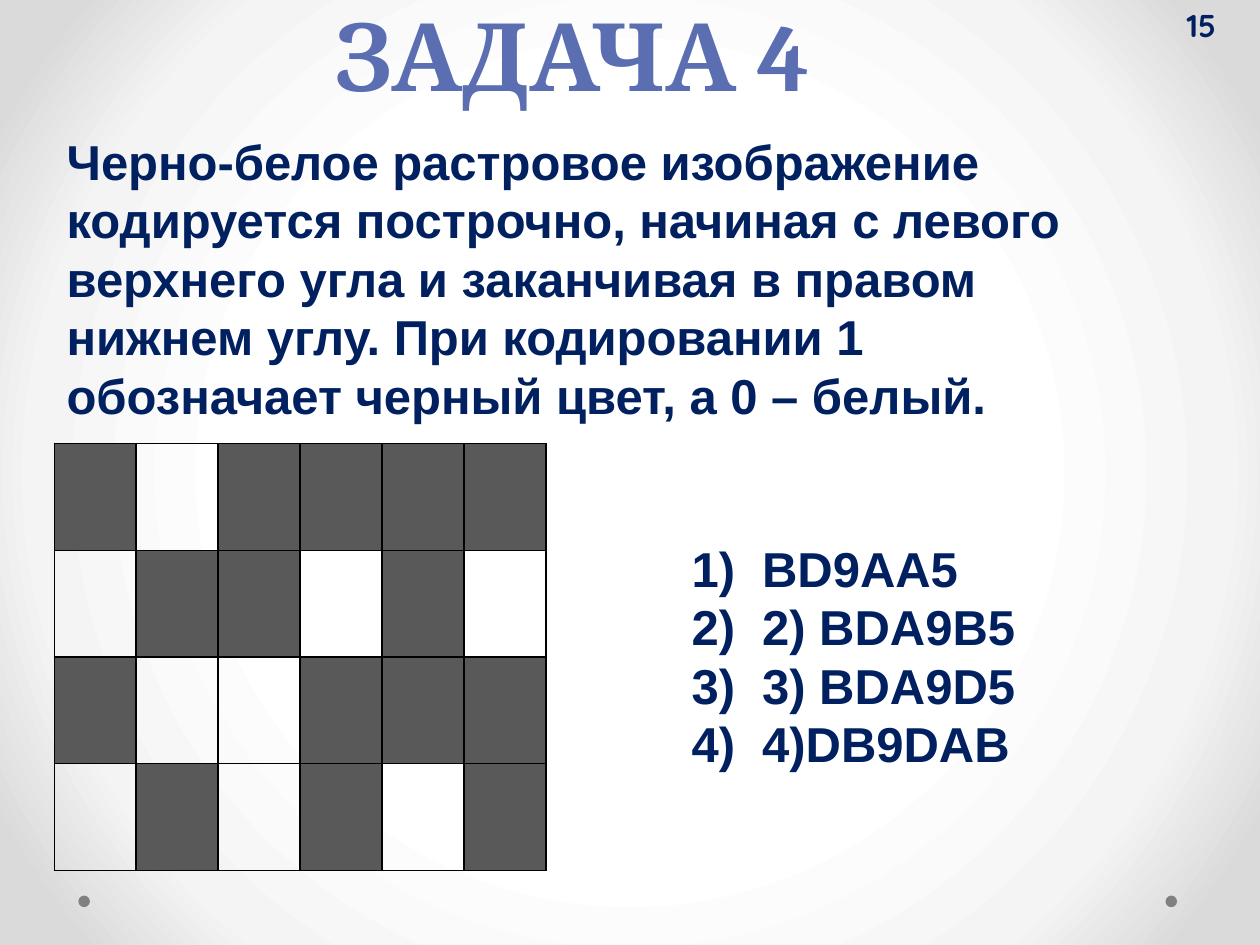
from dataclasses import dataclass

from lxml import etree
from pptx import Presentation
from pptx.dml.color import RGBColor
from pptx.enum import shapes, text
from pptx.oxml import parse_xml
from pptx.oxml.ns import nsdecls, qn
from pptx.util import Pt


@dataclass(frozen=True)
class Theme:
    """Colours, fonts and type sizes of the slide."""
    ink: str = "002060"
    head: str = "5A6EB1"
    dot: str = "808080"
    dark: str = "595959"
    line: str = "000000"
    glow: tuple = ((50, "FFFFFF"), (76, "F4F4F4"), (92, "DADADA"))
    sans: str = "Arial"
    serif: str = "Cambria"
    round: str = "Quicksand"
    big: float = 54
    mid: float = 28
    small: float = 18
    lead: float = 33.5


class Deck:
    """Holds the theme and the current slide and draws each kind of element."""

    def __init__(self, theme):
        """Start a deck with one title and content slide."""
        self.theme = theme
        self.show = Presentation()
        self.show.slide_width, self.show.slide_height = Pt(720), Pt(540)
        self.slide = self.show.slides.add_slide(self.show.slide_layouts[1])

    def glow(self):
        """Fill the background with a round gradient."""
        self.slide.background.fill.gradient()
        old = self.slide.element.find(".//" + qn("a:gradFill"))
        stops = "".join(
            f'<a:gs pos="{pos * 1000}"><a:srgbClr val="{tint}"/></a:gs>'
            for pos, tint in self.theme.glow)
        new = parse_xml(
            f'<a:gradFill {nsdecls("a")} rotWithShape="1"><a:gsLst>{stops}</a:gsLst>'
            '<a:path path="circle"><a:fillToRect l="50000" t="50000" r="50000" b="50000"/>'
            '</a:path></a:gradFill>')
        old.getparent().replace(old, new)

    def place(self, shape, box):
        """Move a shape to a box given in points."""
        shape.left, shape.top, shape.width, shape.height = map(Pt, box)

    def style(self, shape, words, font, size, tint, lead=None,
              align=text.PP_ALIGN.LEFT, anchor=text.MSO_ANCHOR.TOP):
        """Set the words of a shape and format every run."""
        frame = shape.text_frame
        frame.text = words
        frame.word_wrap = True
        frame.auto_size = text.MSO_AUTO_SIZE.NONE
        frame.vertical_anchor = anchor
        for para in frame.paragraphs:
            para.alignment = align
            para.space_before = Pt(0)
            if lead:
                para.line_spacing = Pt(lead)
            for run in para.runs:
                run.font.name, run.font.size, run.font.bold = font, Pt(size), True
                run.font.color.rgb = RGBColor.from_string(tint)
        return frame

    def title(self, words, box):
        """Fill the title placeholder."""
        look = self.theme
        shape = self.slide.shapes.title
        self.place(shape, box)
        self.style(shape, words, look.serif, look.big, look.head, 58,
                   text.PP_ALIGN.CENTER)

    def prose(self, words, box):
        """Add a paragraph of running text."""
        look = self.theme
        shape = self.slide.shapes.add_textbox(*map(Pt, box))
        self.style(shape, words, look.sans, look.mid, look.ink, look.lead)

    def choices(self, items, box, indent):
        """Fill the body placeholder with a numbered list."""
        look = self.theme
        shape = self.slide.placeholders[1]
        self.place(shape, box)
        frame = self.style(shape, "\n".join(items), look.sans, look.mid,
                           look.ink, look.lead)
        for para in frame.paragraphs:
            props = para._p.get_or_add_pPr()
            props.set("marL", str(Pt(indent)))
            props.set("indent", str(-Pt(indent)))
            etree.SubElement(props, qn("a:buFont"), typeface="+mj-lt")
            etree.SubElement(props, qn("a:buAutoNum"), type="arabicParenR")

    def number(self, words, box):
        """Add the page number."""
        look = self.theme
        shape = self.slide.shapes.add_textbox(*map(Pt, box))
        frame = self.style(shape, words, look.round, look.small, look.ink,
                           anchor=text.MSO_ANCHOR.MIDDLE)
        frame.margin_left, frame.margin_right = Pt(2.16), Pt(3.6)

    def dot(self, left, top, size):
        """Add a small round mark."""
        shape = self.slide.shapes.add_shape(
            shapes.MSO_SHAPE.OVAL, *map(Pt, (left, top, size, size)))
        shape.shadow.inherit = False
        shape.fill.solid()
        shape.fill.fore_color.rgb = RGBColor.from_string(self.theme.dot)
        shape.line.fill.background()

    def edge(self, cell):
        """Draw a thin border round a cell."""
        props = cell._tc.get_or_add_tcPr()
        for spot, side in enumerate(("lnL", "lnR", "lnT", "lnB")):
            props.insert(spot, parse_xml(
                f'<a:{side} {nsdecls("a")} w="{Pt(1)}"><a:solidFill>'
                f'<a:srgbClr val="{self.theme.line}"/></a:solidFill></a:{side}>'))

    def bitmap(self, rows, box):
        """Add a table whose cells are dark where a row holds 1."""
        table = self.slide.shapes.add_table(
            len(rows), len(rows[0]), *map(Pt, box)).table
        table.first_row = table.horz_banding = False
        for r, row in enumerate(rows):
            for c, bit in enumerate(row):
                cell = table.cell(r, c)
                if bit == "1":
                    cell.fill.solid()
                    cell.fill.fore_color.rgb = RGBColor.from_string(self.theme.dark)
                else:
                    cell.fill.background()
                self.edge(cell)


def main():
    """Build and save the slide."""
    deck = Deck(Theme())
    deck.glow()
    for left in (666, 44.8):
        deck.dot(left, 511.8, 6.6)
    deck.prose("Черно-белое растровое изображение кодируется построчно, "
               "начиная с левого верхнего угла и заканчивая в правом нижнем углу. "
               "При кодировании 1 обозначает черный цвет, а 0 – белый.",
               (31, 71.5, 607, 177))
    deck.bitmap(("101111", "011010", "100111", "010101"), (31, 253.5, 281, 244))
    deck.choices(("BD9AA5", "2) BDA9B5", "3) BDA9D5", "4)DB9DAB"),
                 (388, 304, 292, 143), 40.3)
    deck.number("15", (676, 0, 44, 29))
    deck.title("ЗАДАЧА 4 ", (0, 1.5, 666, 55.5))
    deck.show.save("out.pptx")


if __name__ == "__main__":
    main()
